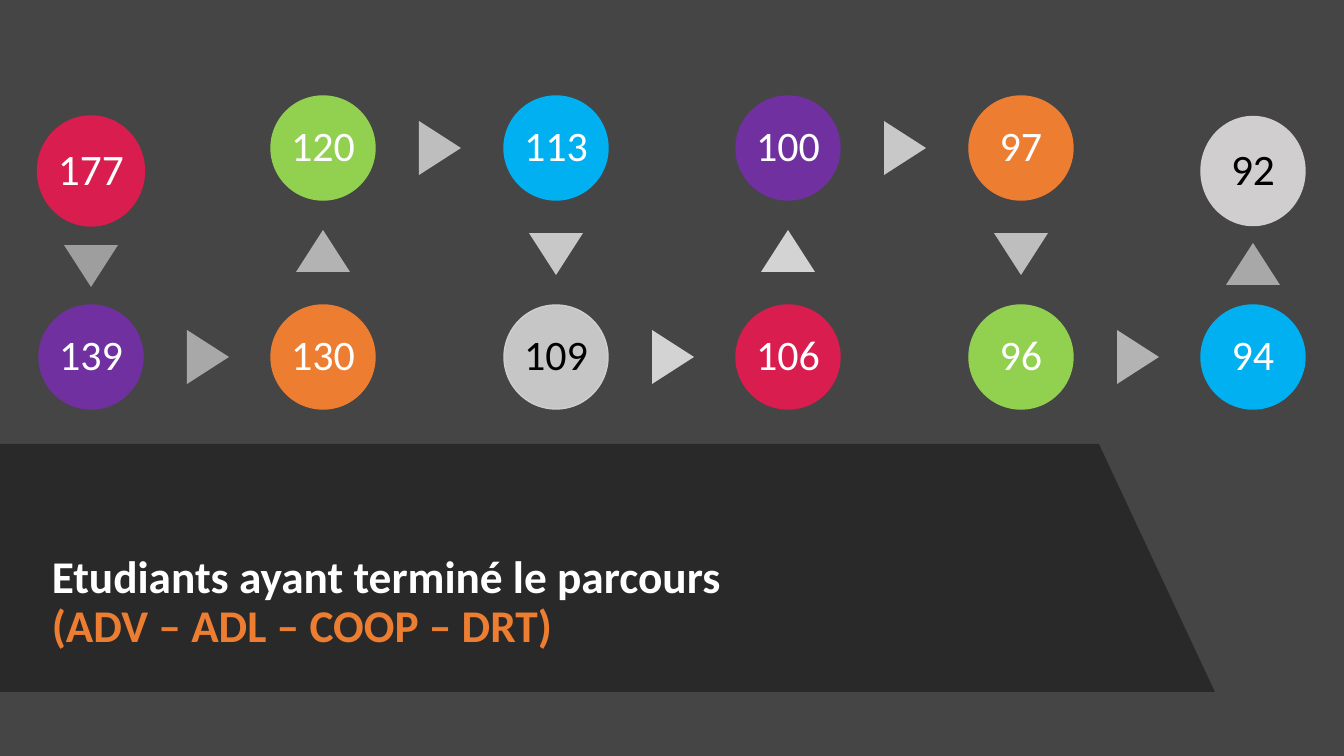
from lxml import etree
from pptx import Presentation
from pptx import util as u
from pptx.dml import color
from pptx.enum import shapes, text
from pptx.oxml import ns

WIDTH, HEIGHT = 1344, 756
SCALE = u.Inches(1) / 100.8
WHITE, BLACK, ORANGE = "FFFFFF", "000000", "ED7D31"
RED, PURPLE, GREEN, BLUE, GREY = "D91D4E", "7030A0", "92D050", "00B0F0", "D0CECE"
TOP, BOTTOM, END = 148, 357, 171
RIGHT, DOWN, UP = 90, 180, 0


def px(length):
    return u.Emu(round(length * SCALE))


def rgb(value):
    return color.RGBColor.from_string(value)


def column_center(column):
    return 91 + 465 * column // 2


def add_span(para, words, *, size, ink, bold=False, font="Calibri"):
    span = para.add_run()
    span.text = words
    span.font.name = font
    span.font.size = u.Pt(size)
    span.font.bold = bold
    span.font.color.rgb = rgb(ink)


class Page:
    def __init__(self, deck, background):
        self.slide = deck.slides.add_slide(deck.slide_layouts[6])
        self.slide.background.fill.solid()
        self.slide.background.fill.fore_color.rgb = rgb(background)

    def paint(self, shape, fill, line=None):
        shape.shadow.inherit = False
        shape.fill.solid()
        shape.fill.fore_color.rgb = rgb(fill)
        if line:
            shape.line.color.rgb = rgb(line)
            shape.line.width = u.Pt(1)
        else:
            shape.line.fill.background()

    def centered(self, kind, x, y, width, height):
        return self.slide.shapes.add_shape(
            kind, px(x - width / 2), px(y - height / 2), px(width), px(height))

    def banner(self, points, fill, opacity):
        builder = self.slide.shapes.build_freeform(*points[0], scale=SCALE)
        builder.add_line_segments(points[1:], close=True)
        shape = builder.convert_to_shape()
        self.paint(shape, fill)
        solid = shape.fill._xPr.find(ns.qn("a:solidFill"))
        etree.SubElement(solid[0], ns.qn("a:alpha"), val=str(opacity * 1000))

    def title(self, left, top, width, height, lines):
        box = self.slide.shapes.add_textbox(px(left), px(top), px(width), px(height))
        frame = box.text_frame
        frame.word_wrap = True
        frame.vertical_anchor = text.MSO_ANCHOR.MIDDLE
        para = frame.paragraphs[0]
        para.line_spacing = 0.9
        for index, (words, ink) in enumerate(lines):
            if index:
                para.add_line_break()
            add_span(para, words, size=32.4, ink=ink, bold=True)

    def circle(self, x, y, count, fill, ink=WHITE, line=None,
               width=104, height=104, size=30):
        shape = self.centered(shapes.MSO_SHAPE.OVAL, x, y, width, height)
        self.paint(shape, fill, line or fill)
        frame = shape.text_frame
        frame.word_wrap = False
        frame.vertical_anchor = text.MSO_ANCHOR.MIDDLE
        frame.margin_left = frame.margin_right = px(4)
        frame.margin_top = frame.margin_bottom = px(4)
        para = frame.paragraphs[0]
        para.alignment = text.PP_ALIGN.CENTER
        para.line_spacing = 0.9
        add_span(para, str(count), size=size, ink=ink)

    def arrow(self, x, y, rotation, fill):
        shape = self.centered(shapes.MSO_SHAPE.ISOSCELES_TRIANGLE, x, y, 54, 42)
        shape.rotation = rotation
        self.paint(shape, fill)


CIRCLES = [
    (0, END, 177, RED, dict(width=107, height=110, size=31)),
    (0, BOTTOM, 139, PURPLE, {}),
    (1, BOTTOM, 130, ORANGE, {}),
    (1, TOP, 120, GREEN, {}),
    (2, TOP, 113, BLUE, {}),
    (2, BOTTOM, 109, "C6C6C6", dict(ink=BLACK, line=GREY)),
    (3, BOTTOM, 106, RED, {}),
    (3, TOP, 100, PURPLE, {}),
    (4, TOP, 97, ORANGE, {}),
    (4, BOTTOM, 96, GREEN, {}),
    (5, BOTTOM, 94, BLUE, {}),
    (5, END, 92, GREY, dict(ink=BLACK, height=109, size=31)),
]
VERTICAL_ARROWS = [
    (266, DOWN, "9E9E9E"), (251, UP, "B3B3B3"), (254, DOWN, "C8C8C8"),
    (251, UP, "D3D3D3"), (254, DOWN, "BEBEBE"), (264, UP, "A8A8A8"),
]
RIGHT_ARROWS = [
    (BOTTOM, "A8A8A8"), (TOP, "BEBEBE"), (BOTTOM, "D3D3D3"),
    (TOP, "C8C8C8"), (BOTTOM, "B3B3B3"),
]


def main():
    deck = Presentation()
    deck.slide_width, deck.slide_height = px(WIDTH), px(HEIGHT)
    page = Page(deck, "454545")
    page.banner([(0, 444), (1099, 444), (1215, 692), (0, 692)], "262626", 88)
    page.title(42, 551, 1021, 104, [
        ("Etudiants ayant terminé le parcours", WHITE),
        ("(ADV – ADL – COOP – DRT)", ORANGE),
    ])
    for column, y, count, fill, style in CIRCLES:
        page.circle(column_center(column), y, count, fill, **style)
    for column, (y, rotation, fill) in enumerate(VERTICAL_ARROWS):
        page.arrow(column_center(column), y, rotation, fill)
    for column, (y, fill) in enumerate(RIGHT_ARROWS):
        page.arrow(column_center(column + 0.5) + 1, y, RIGHT, fill)
    deck.save("out.pptx")


if __name__ == "__main__":
    main()
